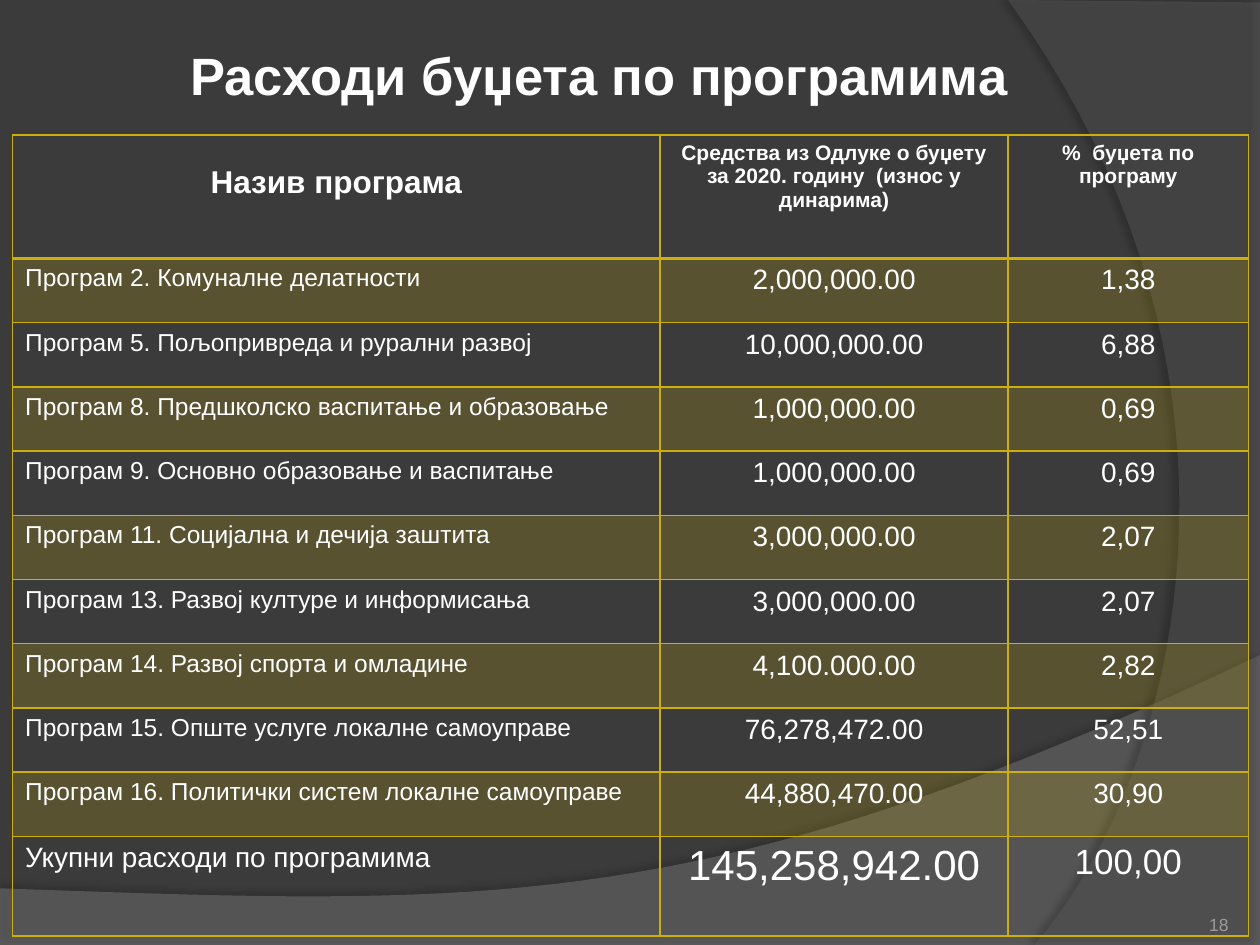
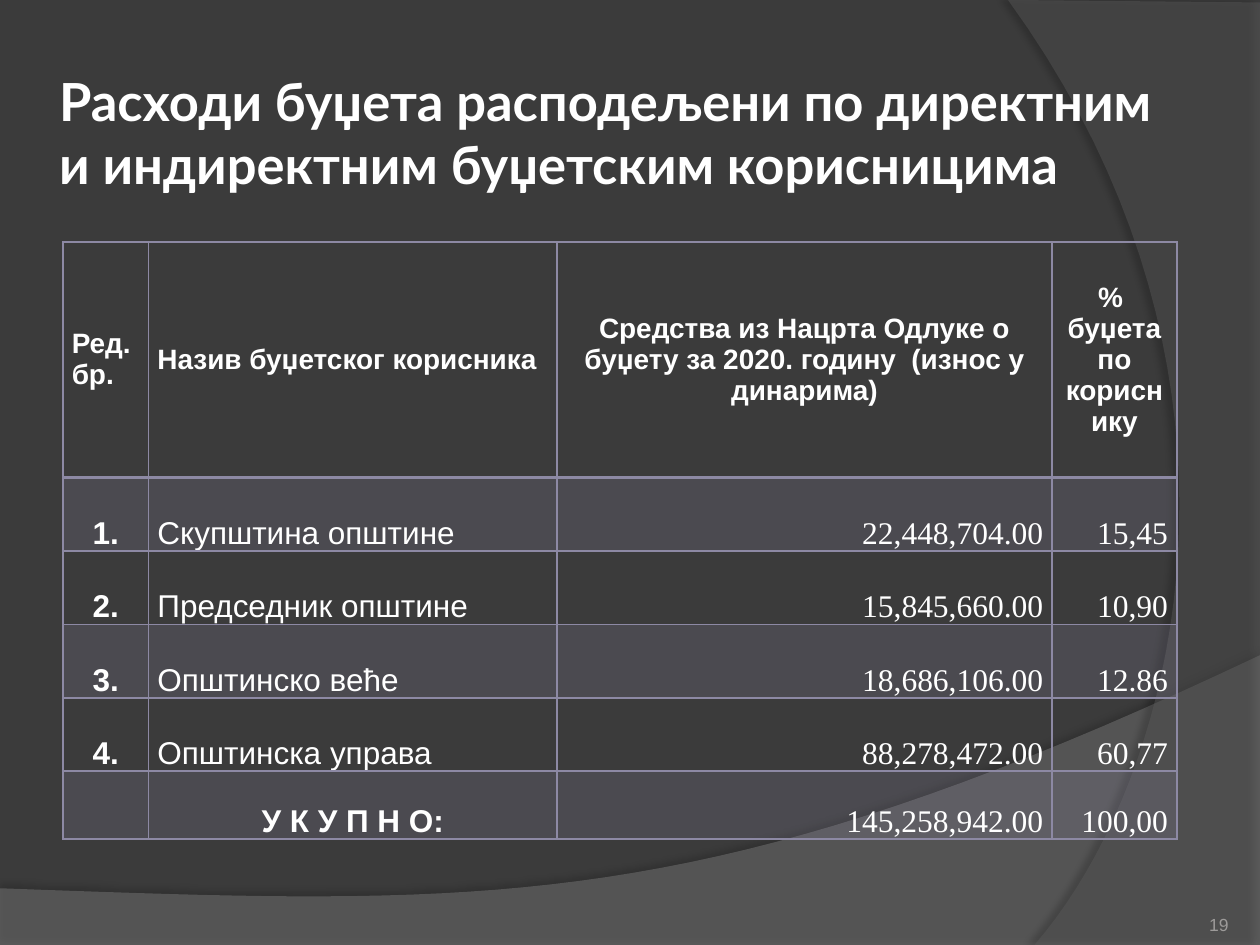
from lxml import etree
from pptx import Presentation, util as u
from pptx.dml.color import RGBColor
from pptx.enum import text as t
from pptx.oxml import parse_xml
from pptx.oxml.ns import qn

COLORS = {"ground": "3B3B3B", "wave": "7F7F7F", "arc": "5E5E5E", "shade": "000000",
          "ink": "FFFFFF", "number": "9D9B9A", "gold": "CCAF0A", "violet": "8D89A4"}
A_NS = "http://schemas.openxmlformats.org/drawingml/2006/main"
LEFT, CENTER, RIGHT = t.PP_ALIGN.LEFT, t.PP_ALIGN.CENTER, t.PP_ALIGN.RIGHT
TOP, MIDDLE, BOTTOM = t.MSO_ANCHOR.TOP, t.MSO_ANCHOR.MIDDLE, t.MSO_ANCHOR.BOTTOM

# The slide is a grid of 100 columns by 75 rows of square units
deck = Presentation()
deck.slide_width, deck.slide_height = u.Inches(10), u.Inches(7.5)
unit = deck.slide_width / 100


def write(frame, words, size=16, font="Arial", bold=False, align=LEFT, color="ink"):
    frame.word_wrap = True
    paragraph = frame.paragraphs[0]
    paragraph.alignment = align
    run = paragraph.add_run()
    run.text = words
    run.font.size, run.font.name, run.font.bold = u.Pt(size), font, bold
    run.font.color.rgb = RGBColor.from_string(COLORS[color])


def tint(fill, color, percent):
    fill.solid()
    fill.fore_color.rgb = RGBColor.from_string(COLORS[color])
    srgb = fill._xPr.find(qn("a:solidFill")).find(qn("a:srgbClr"))
    etree.SubElement(srgb, qn("a:alpha")).set("val", str(percent * 1000))


# Background: straight corners, then a Bezier curve given by two controls and its end
swooshes = [
    dict(corners=[(0, 70.5), (0, 75.1), (100, 75.1), (100, 52)],
         curve=[(55.9, 72.9), (39.1, 71.9), (0, 70.5)],
         color="wave", opacity=45, shadow=(35, 4, 3.5, 270)),
    dict(corners=[(100, 0.2), (100, 75), (82.1, 75)],
         curve=[(93.5, 61.9), (101.8, 30), (80, 0)],
         color="arc", opacity=40, shadow=(45, 4, 4, 180)),
]

# Content of the two slides
programs = dict(
    title="Расходи буџета по програмима", title_font="Arial", title_box=(14.6, 1.7, 85.2, 8.5),
    number="18", accent="gold", table_box=(1, 10.7, 98, 63.9),
    columns=[51.4, 27.6, 19.1], rows=[9.8] + [5.1] * 9 + [7.9],
    insets=(1, 0.5), anchors=(TOP, TOP),
    header_formats=[dict(size=18, align=CENTER)] + [dict(size=12, align=CENTER)] * 2,
    body_formats=[dict(size=14)] + [dict(align=CENTER)] * 2,
    total_formats=[dict(), dict(size=24, align=CENTER), dict(size=20, align=CENTER)],
    cells=[
        ["Назив програма", "Средства из Одлуке о буџету за 2020. годину  (износ у динарима)",
         "%  буџета по програму"],
        ["Програм 2. Комуналне делатности", "2,000,000.00", "1,38"],
        ["Програм 5. Пољопривреда и рурални развој", "10,000,000.00", "6,88"],
        ["Програм 8. Предшколско васпитање и образовање", "1,000,000.00", "0,69"],
        ["Програм 9. Основно образовање и васпитање", "1,000,000.00", "0,69"],
        ["Програм 11. Социјална и дечија заштита", "3,000,000.00", "2,07"],
        ["Програм 13. Развој културе и информисања", "3,000,000.00", "2,07"],
        ["Програм 14. Развој спорта и омладине", "4,100.000.00", "2,82"],
        ["Програм 15. Опште услуге локалне самоуправе", "76,278,472.00", "52,51"],
        ["Програм 16. Политички систем локалне самоуправе", "44,880,470.00", "30,90"],
        ["Укупни расходи по програмима", "145,258,942.00", "100,00"],
    ])

order = dict(size=18, bold=True, align=CENTER)
amount = dict(size=18, font="Times New Roman", align=RIGHT)
users = dict(
    title="Расходи буџета расподељени по директним и индиректним буџетским корисницима",
    title_font="Lato", title_box=(4.2, 4.2, 90, 12.5),
    number="19", accent="violet", table_box=(5, 19.2, 88.3, 47.5),
    columns=[6.8, 32.4, 39.3, 9.9], rows=[18.7] + [5.83] * 4 + [5.4],
    insets=(0.7, 0), anchors=(MIDDLE, BOTTOM),
    header_formats=[dict()] * 2 + [dict(align=CENTER)] * 2,
    body_formats=[order, dict(size=18), amount, amount],
    total_formats=[order, order, amount, amount],
    cells=[
        ["Ред. бр.", "Назив буџетског корисника",
         "Средства из Нацрта Одлуке о буџету за 2020. годину  (износ у динарима)",
         "%  буџета по кориснику"],
        ["1.", "Скупштина општине", "22,448,704.00", "15,45"],
        ["2.", "Председник општине", "15,845,660.00", "10,90"],
        ["3.", "Општинско веће", "18,686,106.00", "12.86"],
        ["4.", "Општинска управа", "88,278,472.00", "60,77"],
        ["", "У К У П Н О:", "145,258,942.00", "100,00"],
    ])

ground = deck.slide_master.background.fill
ground.solid()
ground.fore_color.rgb = RGBColor.from_string(COLORS["ground"])

for page in (programs, users):
    slide = deck.slides.add_slide(deck.slide_layouts[6])

    # Swooshes
    for swoosh in swooshes:
        points = list(swoosh["corners"])
        controls = [points[-1]] + swoosh["curve"]
        for step in range(1, 41):
            s = step / 40
            weights = ((1 - s) ** 3, 3 * s * (1 - s) ** 2, 3 * s * s * (1 - s), s ** 3)
            points.append(tuple(sum(w * c[axis] for w, c in zip(weights, controls))
                                for axis in (0, 1)))
        points = [(x * unit, y * unit) for x, y in points]
        outline = slide.shapes.build_freeform(*points[0])
        outline.add_line_segments(points[1:], close=True)
        shape = outline.convert_to_shape()
        tint(shape.fill, swoosh["color"], swoosh["opacity"])
        shape.line.fill.background()
        shape.shadow.inherit = False
        opacity, blur, distance, angle = swoosh["shadow"]
        shape._element.spPr.find(qn("a:effectLst")).append(parse_xml(
            f'<a:outerShdw xmlns:a="{A_NS}" blurRad="{u.Pt(blur)}" dist="{u.Pt(distance)}" '
            f'dir="{angle * 60000}" algn="ctr" rotWithShape="0"><a:srgbClr val="{COLORS["shade"]}">'
            f'<a:alpha val="{opacity * 1000}"/></a:srgbClr></a:outerShdw>'))

    # Title and slide number
    for box, inset, anchor, words, style in (
            (page["title_box"], 0.5, MIDDLE, page["title"],
             dict(size=30, font=page["title_font"], bold=True)),
            ((89.2, 70.2, 8.3, 4), 0, BOTTOM, page["number"],
             dict(size=10, align=RIGHT, color="number"))):
        frame = slide.shapes.add_textbox(*(int(n * unit) for n in box)).text_frame
        frame.margin_left = frame.margin_right = int(inset * unit)
        frame.margin_top = frame.margin_bottom = int(inset * unit)
        frame.vertical_anchor = anchor
        write(frame, words, **style)

    # Table
    cells = page["cells"]
    last = len(cells) - 1
    table = slide.shapes.add_table(len(cells), len(cells[0]),
                                   *(int(n * unit) for n in page["table_box"])).table
    table.first_row = table.horz_banding = False
    for column, width in zip(table.columns, page["columns"]):
        column.width = int(width * unit)
    for row, height in zip(table.rows, page["rows"]):
        row.height = int(height * unit)

    for r, row in enumerate(cells):
        part = "header" if r == 0 else "total" if r == last else "body"
        for c, (words, style) in enumerate(zip(row, page[part + "_formats"])):
            cell = table.cell(r, c)
            side, edge = (int(n * unit) for n in page["insets"])
            cell.margin_left = cell.margin_right = side
            cell.margin_top = cell.margin_bottom = edge
            cell.vertical_anchor = page["anchors"][r > 0]
            write(cell.text_frame, words, **{"bold": r == 0, **style})
            if r % 2:
                tint(cell.fill, page["accent"], 20)
            else:
                cell.fill.background()
            # The rule under the header is twice as thick
            for place, name in enumerate(("lnL", "lnR", "lnT", "lnB")):
                heavy = (r, name) in ((0, "lnB"), (1, "lnT"))
                cell._tc.tcPr.insert(place, parse_xml(
                    f'<a:{name} xmlns:a="{A_NS}" w="{u.Pt(2 if heavy else 1)}"><a:solidFill>'
                    f'<a:srgbClr val="{COLORS[page["accent"]]}"/></a:solidFill></a:{name}>'))

    # The program heading sits lower than its neighbours
    if page is programs:
        table.cell(0, 0).margin_top = int(2.4 * unit)

deck.save("out.pptx")
